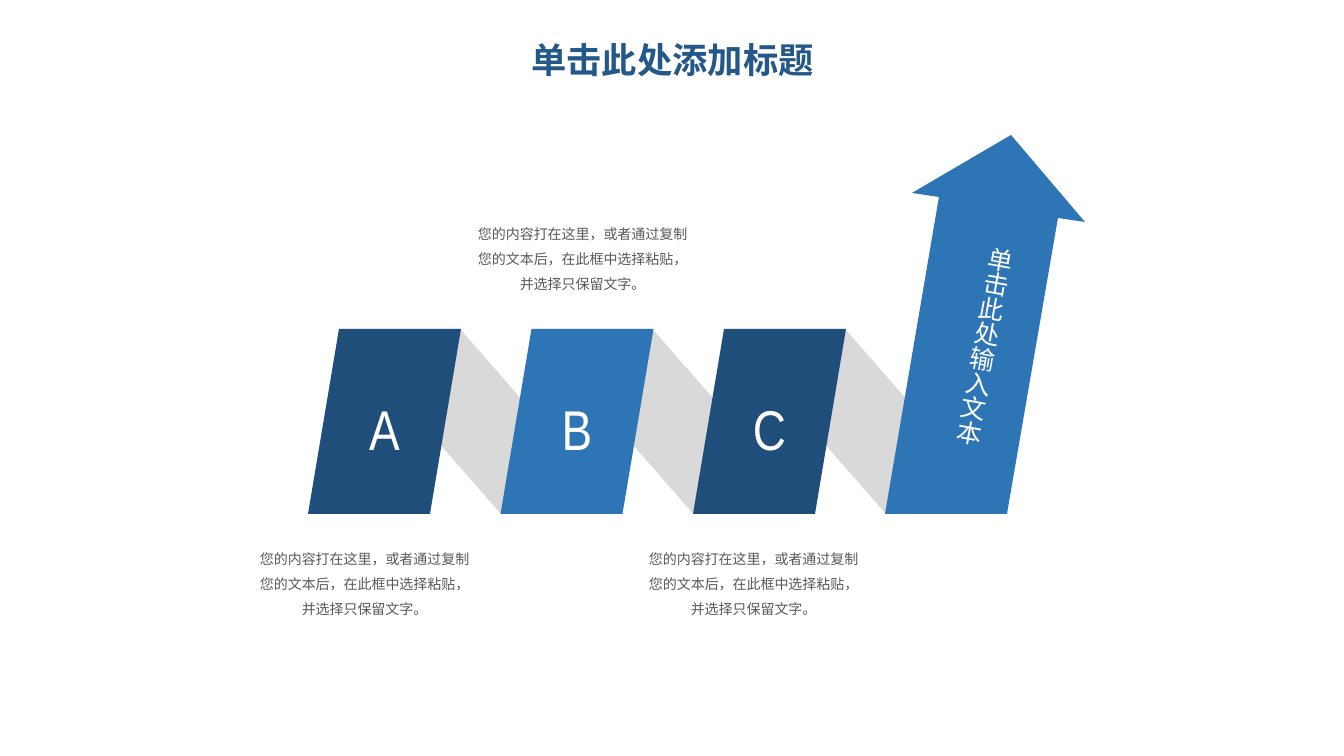
"""Build a slide with a folded ribbon of three panels that ends in a rising arrow."""
from lxml import etree
from pptx import Presentation
from pptx.dml.color import RGBColor
from pptx.enum.shapes import MSO_SHAPE
from pptx.enum.text import MSO_ANCHOR, PP_ALIGN
from pptx.oxml.ns import qn
from pptx.util import Pt

PARALLELOGRAM = MSO_SHAPE.PARALLELOGRAM
MIDDLE, TOP = MSO_ANCHOR.MIDDLE, MSO_ANCHOR.TOP
CENTER, LEFT = PP_ALIGN.CENTER, PP_ALIGN.LEFT
PX = 914400 / 100.8

NAVY, BLUE, GRAY = "1E4E79", "2E75B5", "D9D9D9"
CJK = "Noto Sans CJK SC"
TITLE = "单击此处添加标题"
ARROW_TEXT = "单击此处输入文本"
NOTE = "您的内容打在这里，或者通过复制您的文本后，在此框中选择粘贴，并选择只保留文字。"
PANELS = [("A", NAVY), ("B", BLUE), ("C", NAVY)]
NOTE_PLACES = [(249, 537), (467, 212), (638, 537)]
ARROW = [(1011, 135), (1085, 222), (1058, 218), (1007, 514),
         (885, 514), (939, 197), (912, 193)]

PANEL_LEFT, PANEL_TOP, PANEL_WIDTH, PANEL_HEIGHT = 308, 329, 153, 185
PANEL_STEP = 192.5
SLANT = 31
BAND_WIDTH = 283

TITLE_STYLE = {"size": Pt(25.2), "name": "Montserrat", "bold": True}
LETTER_STYLE = {"size": Pt(40), "name": "Arial Narrow"}
ARROW_STYLE = {"size": Pt(18), "name": CJK}
NOTE_STYLE = {"size": Pt(10), "name": CJK}


def emu(*lengths):
    return [round(length * PX) for length in lengths]


def color(value):
    return RGBColor.from_string(value)


def paint(shape, fill):
    shape.shadow.inherit = False
    shape.fill.solid()
    shape.fill.fore_color.rgb = color(fill)
    shape.line.fill.background()


def write(box, text, style, ink, spacing=1.0, align=CENTER, anchor=MIDDLE, wrap=True):
    frame = box.text_frame
    frame.word_wrap = wrap
    frame.vertical_anchor = anchor
    para = frame.paragraphs[0]
    para.alignment = align
    para.line_spacing = spacing
    span = para.add_run()
    span.text = text
    for key, value in style.items():
        setattr(span.font, key, value)
    span.font.color.rgb = color(ink)
    etree.SubElement(span.font._element, qn("a:ea")).set("typeface", CJK)
    return frame


def add_slanted(shapes, left, width, lean, fill):
    shape = shapes.add_shape(PARALLELOGRAM, *emu(left, PANEL_TOP, width, PANEL_HEIGHT))
    shape.adjustments[0] = lean / min(width, PANEL_HEIGHT)
    paint(shape, fill)
    return shape


def main():
    deck = Presentation()
    deck.slide_width, deck.slide_height = emu(1344, 756)
    page = deck.slides.add_slide(deck.slide_layouts[5])
    shapes = page.shapes

    title = shapes.title
    title.left, title.top, title.width, title.height = emu(93, 36, 1159, 52)
    write(title, TITLE, TITLE_STYLE, "235888", 0.9)

    lefts = [PANEL_LEFT + PANEL_STEP * index for index in range(len(PANELS))]
    for left in lefts:
        band = add_slanted(shapes, left + SLANT, BAND_WIDTH, BAND_WIDTH - PANEL_WIDTH + SLANT // 3 - 2 + SLANT - 7, GRAY)
        band._element.spPr.find(qn("a:xfrm")).set("flipH", "1")

    for left, (letter, fill) in zip(lefts, PANELS):
        panel = add_slanted(shapes, left, PANEL_WIDTH, SLANT, fill)
        frame = write(panel, letter, LETTER_STYLE, "FFFFFF", 1.2)
        frame.margin_left = frame.margin_right = 0

    builder = shapes.build_freeform(*ARROW[0], scale=PX)
    builder.add_line_segments(ARROW[1:], close=True)
    paint(builder.convert_to_shape(), BLUE)

    label = shapes.add_textbox(*emu(955, 235, 50, 214))
    label.rotation = 10.2
    frame = write(label, ARROW_TEXT, ARROW_STYLE, "FFFFFF", align=LEFT, anchor=TOP, wrap=False)
    frame._txBody.bodyPr.set("vert", "eaVert")

    for left, top in NOTE_PLACES:
        note = shapes.add_textbox(*emu(left, top, 231, 87))
        write(note, NOTE, NOTE_STYLE, "595959", 1.5, anchor=TOP)

    deck.save("out.pptx")


if __name__ == "__main__":
    main()
